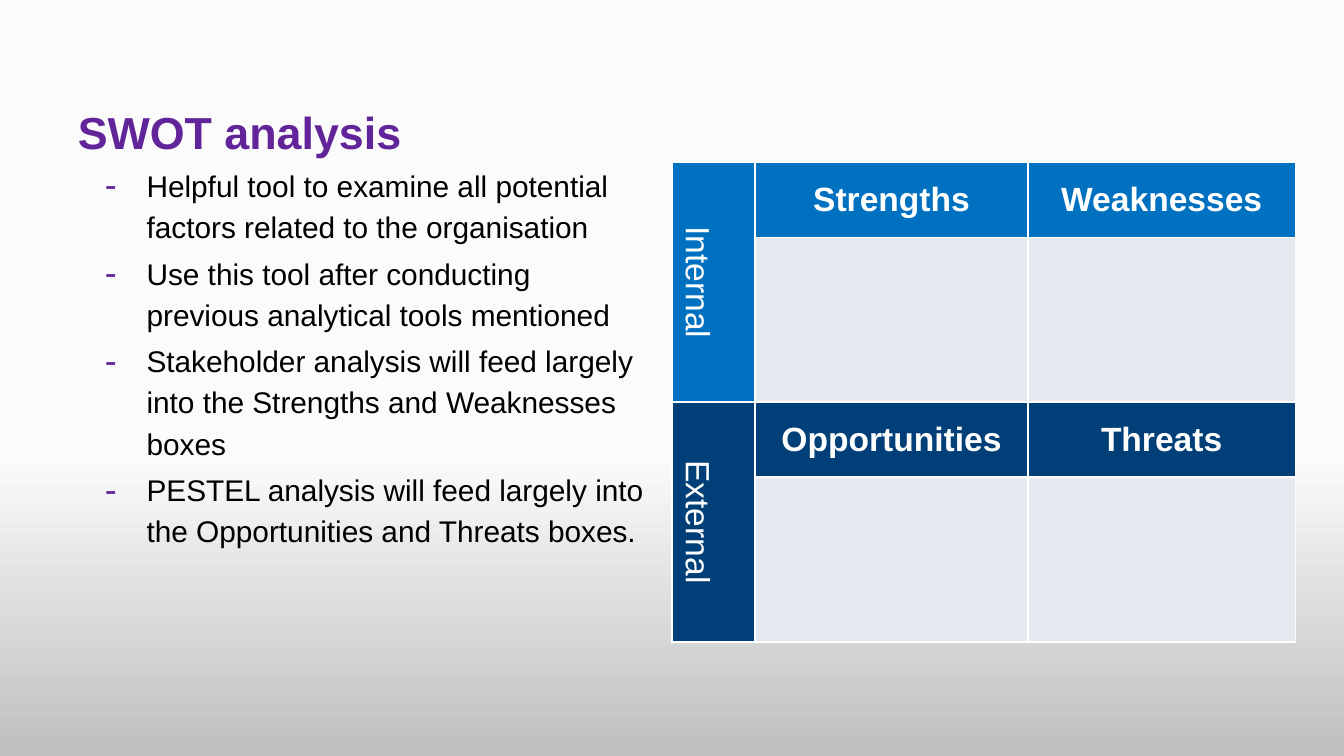
from lxml import etree
from pptx import Presentation
from pptx.dml.color import RGBColor
from pptx.enum.text import MSO_ANCHOR, MSO_AUTO_SIZE, PP_ALIGN
from pptx.oxml.ns import qn
from pptx.util import Cm, Pt

LEFT, CENTER = PP_ALIGN.LEFT, PP_ALIGN.CENTER
TOP, MIDDLE = MSO_ANCHOR.TOP, MSO_ANCHOR.MIDDLE
NO_AUTOFIT = MSO_AUTO_SIZE.NONE


class Theme:
    font = "Arial"
    purple, black, white = "622599", "000000", "FFFFFF"
    internal, external, empty = "0070C0", "003F78", "E7E9F0"
    fade = ((0.6, "FBFBFB"), (1, "BFBFBF"))
    title, body, table = 24, 16, 18


def write(p, text, size, color, bold=False, align=LEFT):
    p.alignment = align
    r = p.add_run()
    r.text = text
    r.font.name, r.font.size, r.font.bold = Theme.font, Pt(size), bold
    r.font.color.rgb = RGBColor.from_string(color)


def add_xml(parent, tag, **attributes):
    return etree.SubElement(parent, qn(tag), attributes)


prs = Presentation()
prs.slide_width, prs.slide_height = Cm(25.4), Cm(14.29)
s = prs.slides.add_slide(prs.slide_layouts[1])

# Background
fill = s.background.fill
fill.gradient()
fill.gradient_angle = 270
for stop, (position, color) in zip(fill.gradient_stops, Theme.fade):
    stop.position = position
    stop.color.rgb = RGBColor.from_string(color)

# Title and list
title, body = s.shapes.title, s.placeholders[1]
for sp, top, width, height, inset in (
    (title, 1.75, 22.66, 1.8, 0.23),
    (body, 3.07, 10.8, 8.48, 0),
):
    sp.left, sp.top, sp.width, sp.height = Cm(1.47), Cm(top), Cm(width), Cm(height)
    tf = sp.text_frame
    tf.word_wrap, tf.auto_size, tf.vertical_anchor = True, NO_AUTOFIT, TOP
    tf.margin_left = tf.margin_right = tf.margin_bottom = 0
    tf.margin_top = Cm(inset)

write(title.text_frame.paragraphs[0], "SWOT analysis", Theme.title, Theme.purple, bold=True)

points = (
    "Helpful tool to examine all potential factors related to the organisation",
    "Use this tool after conducting previous analytical tools mentioned",
    "Stakeholder analysis will feed largely into the Strengths and Weaknesses boxes",
    "PESTEL analysis will feed largely into the Opportunities and Threats boxes.",
)
tf = body.text_frame
for i, point in enumerate(points):
    p = tf.add_paragraph() if i else tf.paragraphs[0]
    p.level = 1
    pPr = p._p.get_or_add_pPr()
    pPr.set("marL", str(Cm(1.3)))
    pPr.set("indent", str(-Cm(0.79)))
    add_xml(add_xml(pPr, "a:buClr"), "a:srgbClr", val=Theme.purple)
    add_xml(pPr, "a:buSzPct", val="120000")
    add_xml(pPr, "a:buFont", typeface=Theme.font)
    add_xml(pPr, "a:buChar", char="-")
    p.line_spacing, p.space_before = Pt(22), Pt(3 if i else 0)
    write(p, point, Theme.body, Theme.black)

# SWOT table
columns, rows = (1.57, 5.16, 5.05), (1.42, 3.11) * 2
table = s.shapes.add_table(
    len(rows), len(columns), Cm(12.7), Cm(3.07), Cm(sum(columns)), Cm(sum(rows))
).table
table.first_row = table.horz_banding = False
for column, width in zip(table.columns, columns):
    column.width = Cm(width)
for row, height in zip(table.rows, rows):
    row.height = Cm(height)

for cell in table.iter_cells():
    tcPr = cell._tc.get_or_add_tcPr()
    for side in ("a:lnL", "a:lnR", "a:lnT", "a:lnB"):
        line = add_xml(tcPr, side, w=str(Pt(1)))
        add_xml(add_xml(line, "a:solidFill"), "a:srgbClr", val=Theme.white)
    cell.fill.solid()
    cell.fill.fore_color.rgb = RGBColor.from_string(Theme.empty)

bands = (
    (Theme.internal, "Internal", "Strengths", "Weaknesses"),
    (Theme.external, "External", "Opportunities", "Threats"),
)
for band, (color, *labels) in enumerate(bands):
    top = 2 * band
    table.cell(top, 0).merge(table.cell(top + 1, 0))
    table.cell(top, 0)._tc.get_or_add_tcPr().set("vert", "vert")
    for col, label in enumerate(labels):
        cell = table.cell(top, col)
        cell.fill.fore_color.rgb = RGBColor.from_string(color)
        cell.vertical_anchor = MIDDLE
        write(cell.text_frame.paragraphs[0], label, Theme.table, Theme.white,
              bold=col > 0, align=CENTER)

prs.save("out.pptx")
